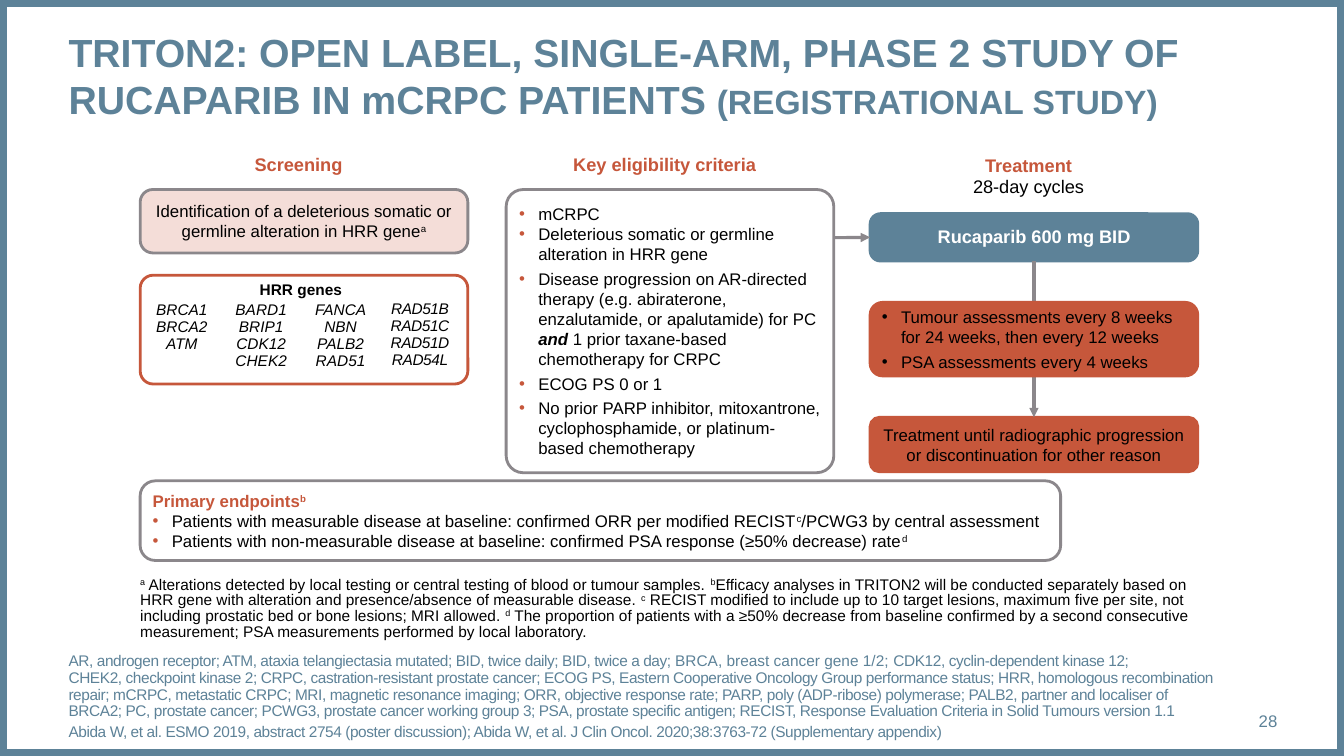
from dataclasses import dataclass, field

from lxml import etree
from pptx import Presentation
from pptx.dml.color import RGBColor
from pptx.enum.shapes import MSO_CONNECTOR, MSO_SHAPE
from pptx.enum.text import MSO_ANCHOR, MSO_AUTO_SIZE, PP_ALIGN
from pptx.oxml.ns import qn
from pptx.util import Inches, Pt

RECTANGLE, ROUNDED = MSO_SHAPE.RECTANGLE, MSO_SHAPE.ROUNDED_RECTANGLE
STRAIGHT = MSO_CONNECTOR.STRAIGHT
TOP, MIDDLE, BOTTOM = MSO_ANCHOR.TOP, MSO_ANCHOR.MIDDLE, MSO_ANCHOR.BOTTOM
LEFT, CENTER, RIGHT = PP_ALIGN.LEFT, PP_ALIGN.CENTER, PP_ALIGN.RIGHT
FIXED = MSO_AUTO_SIZE.NONE
SIDE_TOP, SIDE_LEFT, SIDE_BOTTOM = 0, 1, 2

BLUE, ORANGE, GRAY = "5D8298", "C6573B", "8B878B"
PINK, WHITE, BLACK = "F4DDD8", "FFFFFF", "000000"
NO_BREAK = chr(160)
PLAIN_TABLE = "{2D5ABB26-0587-4C30-8999-92F81FD0307C}"
COLUMN_LEFT, COLUMN_WIDTH = (1.39, 5.02, 8.63), 3.25
NO_INSETS = (0, 0, 0, 0)
BOX_INSETS = (0.08, 0.05, 0.08, 0.05)
HEADING_INSETS = (0, 0.05, 0.1, 0.05)


@dataclass
class Span:
    text: str
    formats: dict = field(default_factory=dict)
    tracking: float = 0


@dataclass
class Para:
    """Text in which every second part between ^ marks is superscript, or a list of spans."""
    content: str | list[Span]
    formats: dict = field(default_factory=dict)
    color: str = BLACK
    bullet: str = ""
    layout: dict = field(default_factory=dict)


@dataclass
class Box:
    area: tuple
    paras: list[Para]
    rounding: float
    fill: str = ""
    line: str = ""
    insets: tuple = BOX_INSETS
    anchor: MSO_ANCHOR = MIDDLE


def rgb(color: str) -> RGBColor:
    return RGBColor.from_string(color)


def set_all(target, formats: dict) -> None:
    for name, value in formats.items():
        setattr(target, name, value)


def add_bullet(para, color: str) -> None:
    properties = para._p.get_or_add_pPr()
    properties.set("marL", str(Inches(0.19)))
    properties.set("indent", str(-Inches(0.19)))
    tint = etree.SubElement(properties, qn("a:buClr"))
    etree.SubElement(tint, qn("a:srgbClr"), val=color)
    etree.SubElement(properties, qn("a:buFont"), typeface="Arial")
    etree.SubElement(properties, qn("a:buChar"), char="•")


def write(frame, paras: list[Para], insets: tuple = NO_INSETS, anchor=TOP) -> None:
    sides = ("margin_left", "margin_top", "margin_right", "margin_bottom")
    set_all(frame, {side: Inches(inset) for side, inset in zip(sides, insets)})
    set_all(frame, {"word_wrap": True, "auto_size": FIXED, "vertical_anchor": anchor})
    write_paras(frame, paras)


def write_paras(frame, paras: list[Para]) -> None:
    for index, item in enumerate(paras):
        para = frame.add_paragraph() if index else frame.paragraphs[0]
        set_all(para, {"alignment": LEFT, **item.layout})
        if item.bullet:
            add_bullet(para, item.bullet)
        spans = [Span(item.content)] if isinstance(item.content, str) else item.content
        for span in spans:
            for position, text in enumerate(span.text.split("^")):
                if not text:
                    continue
                run = para.add_run()
                run.text = text
                set_all(run.font, {"name": "Arial", "size": Pt(12), **item.formats, **span.formats})
                run.font.color.rgb = rgb(item.color)
                if position % 2:
                    run._r.get_or_add_rPr().set("baseline", "30000")
                if span.tracking:
                    run._r.get_or_add_rPr().set("spc", str(round(span.tracking * 100)))


def add_text(page, area: tuple, paras: list[Para], anchor=TOP) -> None:
    write(page.shapes.add_textbox(*map(Inches, area)).text_frame, paras, NO_INSETS, anchor)


def add_box(page, box: Box):
    shape = page.shapes.add_shape(ROUNDED, *map(Inches, box.area))
    shape.shadow.inherit = False
    shape.adjustments[0] = box.rounding
    if box.fill:
        shape.fill.solid()
        shape.fill.fore_color.rgb = rgb(box.fill)
    else:
        shape.fill.background()
    if box.line:
        shape.line.color.rgb = rgb(box.line)
        shape.line.width = Pt(2)
    else:
        shape.line.fill.background()
    if box.paras:
        write(shape.text_frame, box.paras, box.insets, box.anchor)
    return shape


def add_border(deck, page) -> None:
    """Frame the page from the slide master."""
    border = page.shapes.add_shape(RECTANGLE, 0, 0, deck.slide_width, deck.slide_height)
    border.shadow.inherit = False
    border.fill.background()
    border.line.color.rgb = rgb(BLUE)
    border.line.width = Pt(10)
    border.element.nvSpPr.cNvPr.set("id", "20")
    deck.slide_master.shapes.element.append(border.element)


def add_arrow(page, start: tuple, end: tuple):
    arrow = page.shapes.add_connector(STRAIGHT, *map(Inches, start + end))
    arrow.line.color.rgb = rgb(GRAY)
    arrow.line.width = Pt(2.25)
    etree.SubElement(arrow.line._get_or_add_ln(), qn("a:tailEnd"), type="triangle")
    etree.SubElement(arrow._element.spPr, qn("a:effectLst"))
    return arrow


def add_gene_table(page) -> None:
    genes = (("BRCA1", "BRCA2", "ATM"), ("BARD1", "BRIP1", "CDK12", "CHEK2"),
             ("FANCA", "NBN", "PALB2", "RAD51"), ("RAD51B", "RAD51C", "RAD51D", "RAD54L"))
    table = page.shapes.add_table(2, 4, *map(Inches, (1.41, 2.78, 3.15, 0.96))).table
    set_all(table, {"first_row": False, "horz_banding": False})
    table._tbl.tblPr.find(qn("a:tableStyleId")).text = PLAIN_TABLE
    for row, height in zip(table.rows, (0.2, 0.76)):
        row.height = Inches(height)
    for cell in table.iter_cells():
        cell.fill.background()
        set_all(cell, {"margin_top": Inches(0.01), "margin_bottom": Inches(0.01)})
    heading = table.cell(0, 0)
    heading.merge(table.cell(0, 3))
    centered = {"alignment": CENTER}
    write_paras(heading.text_frame,
                [Para("HRR genes", {"size": Pt(11), "bold": True}, layout=centered)])
    for column, names in enumerate(genes):
        cell = table.cell(1, column)
        last = column == len(genes) - 1
        if last:
            set_all(cell, {"margin_top": 0, "margin_bottom": 0})
        write_paras(cell.text_frame, [
            Para([Span(name, tracking=-0.3 if last else 0)],
                 {"size": Pt(11), "italic": True}, layout=centered) for name in names])


def main() -> None:
    deck = Presentation()
    deck.slide_width, deck.slide_height = Inches(13.33), Inches(7.5)
    page = deck.slides.add_slide(deck.slide_layouts[5])
    add_border(deck, page)

    title = page.shapes.title
    set_all(title, dict(zip(("left", "top", "width", "height"),
                            map(Inches, (0.68, 0.28, 11.99, 0.94)))))
    write(title.text_frame, [Para([
        Span("TRITON2: OPEN LABEL, SINGLE-ARM, PHASE 2 STUDY OF RUCAPARIB IN mCRPC PATIENTS "),
        Span("(REGISTRATIONAL STUDY)", {"size": Pt(24)})],
        {"size": Pt(28), "bold": True}, BLUE)])

    centered, spaced = {"alignment": CENTER}, {"space_after": Pt(3)}
    strong = {"size": Pt(13), "bold": True}
    headings = ((1.81, "Screening", ""), (5.44, "Key eligibility criteria", ""),
                (9.3, "Treatment", "28-day cycles"))
    for left, heading, detail in headings:
        paras = [Para(heading, strong, ORANGE, layout=centered)]
        if detail:
            paras.append(Para(detail, {"size": Pt(13)}, layout=centered))
        area = (left, 1.47, 1.9, 0.54) if detail else (left, 1.47, 2.4, 0.32)
        add_box(page, Box(area, paras, 0, insets=HEADING_INSETS, anchor=BOTTOM))

    screening, eligibility, treatment = COLUMN_LEFT
    dose = add_box(page, Box((treatment, 2.12, COLUMN_WIDTH, 0.47), [
        Para("Rucaparib 600 mg BID", strong, WHITE, layout={**centered, "line_spacing": 0.9})],
        0.22, BLUE, BLUE))
    duration = add_box(page, Box((treatment, 4.14, COLUMN_WIDTH, 0.54), [
        Para("Treatment until radiographic progression or discontinuation for other reason",
             layout={**centered, **spaced})], 0.17, ORANGE, ORANGE))
    treatment_arrow = add_arrow(page, (10.25, 2.59), (10.25, 4.14))
    treatment_arrow.begin_connect(dose, SIDE_BOTTOM)
    treatment_arrow.end_connect(duration, SIDE_TOP)
    add_arrow(page, (8.05, 2.36), (8.63, 2.36)).end_connect(dose, SIDE_LEFT)

    boxes = [
        Box((treatment, 3, COLUMN_WIDTH, 0.73), [
            Para(text, bullet=BLACK, layout=spaced) for text in (
                "Tumour assessments every 8 weeks for 24 weeks, then every 12 weeks",
                "PSA assessments every 4 weeks")], 0.17, ORANGE, ORANGE),
        Box((eligibility, 1.88, COLUMN_WIDTH, 2.81), [Para("mCRPC", bullet=ORANGE)] + [
            Para(content, bullet=ORANGE, layout=spaced) for content in (
                "Deleterious somatic or germline alteration in HRR gene",
                [Span("Disease progression on AR-directed therapy (e.g. abiraterone, "
                      "enzalutamide, or apalutamide) for PC "),
                 Span("and", {"bold": True, "italic": True}),
                 Span(" 1 prior taxane-based chemotherapy for CRPC")],
                "ECOG PS 0 or 1",
                "No prior PARP inhibitor, mitoxantrone, cyclophosphamide, or "
                "platinum-based chemotherapy")], 0.06, WHITE, GRAY),
        Box((screening, 1.88, COLUMN_WIDTH, 0.63), [
            Para("Identification of a deleterious somatic or germline alteration in HRR gene^a^",
                 layout=centered)], 0.2, PINK, GRAY),
        Box((screening, 4.77, 9.13, 0.79), [
            Para("Primary endpoints^b^", {"bold": True}, ORANGE),
            Para("Patients with measurable disease at baseline: confirmed ORR per modified "
                 "RECIST^c^/PCWG3 by central assessment", bullet=ORANGE),
            Para("Patients with non-measurable disease at baseline: confirmed PSA response "
                 "(≥50% decrease) rate^d^", bullet=ORANGE)], 0.19, WHITE, GRAY),
    ]
    for box in boxes:
        add_box(page, box)
    add_gene_table(page)
    add_box(page, Box((screening, 2.73, COLUMN_WIDTH, 1.08), [], 0.12, line=ORANGE))

    small = {"size": Pt(11)}
    add_text(page, (screening, 5.73, 10.65, 0.63), [Para(
        "^a^ Alterations detected by local testing or central testing of blood or tumour samples. "
        "^b^Efficacy analyses in TRITON2 will be conducted separately based on HRR gene with "
        "alteration and presence/absence of measurable disease. ^c^ RECIST modified to include up "
        "to 10 target lesions, maximum five per site, not including prostatic bed or bone lesions; "
        "MRI allowed. ^d^ The proportion of patients with a ≥50% decrease from baseline confirmed "
        "by a second consecutive measurement; PSA measurements performed by local laboratory.",
        small, layout={"line_spacing": 0.85})])
    abbreviations = [
        Span("AR, androgen receptor; ATM, ataxia telangiectasia mutated; BID, twice daily; "
             "BID, twice a day; ", tracking=-0.3),
        Span("BRCA, breast cancer gene 1/2; "),
        Span(f"CDK12, cyclin-dependent kinase 12; CHEK2,{NO_BREAK}checkpoint kinase 2; CRPC, "
             "castration-resistant prostate cancer; ECOG PS, Eastern Cooperative Oncology Group "
             "performance status; HRR, homologous recombination repair; mCRPC, metastatic CRPC; "
             "MRI, magnetic resonance imaging; ORR, objective response rate; PARP, poly "
             "(ADP-ribose) polymerase; PALB2, partner and localiser of BRCA2; "
             f"PC,{NO_BREAK}prostate cancer; PCWG3, prostate cancer working group 3; PSA, prostate "
             "specific antigen; RECIST, Response Evaluation Criteria in Solid Tumours version 1.1",
             tracking=-0.3)]
    reference = [Span("Abida W, et al. ESMO 2019, abstract 2754 (poster discussion); Abida W, et al. "
                      "J Clin Oncol. 2020;38:3763-72 (Supplementary appendix)", tracking=-0.3)]
    add_text(page, (0.68, 6.95, 11.42, 0.4), [
        Para(spans, small, BLUE, layout={**spaced, "line_spacing": 0.9})
        for spans in (abbreviations, reference)], BOTTOM)
    add_text(page, (11.5, 6.95, 1.17, 0.4),
             [Para("28", color=BLUE, layout={"alignment": RIGHT})], MIDDLE)
    deck.save("out.pptx")


if __name__ == "__main__":
    main()
